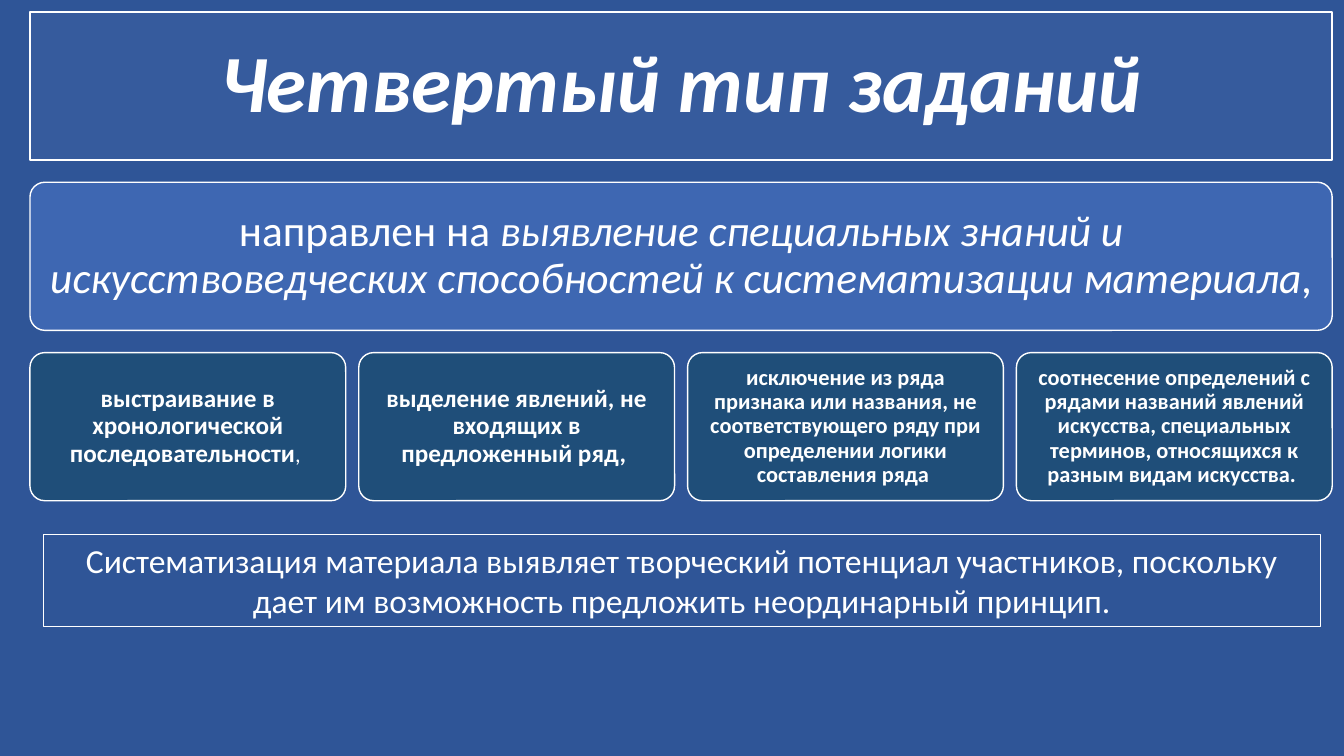
from dataclasses import dataclass

from lxml import etree
from pptx import Presentation
from pptx.dml.color import RGBColor
from pptx.enum.shapes import MSO_SHAPE
from pptx.enum.text import MSO_ANCHOR, MSO_AUTO_SIZE, PP_ALIGN
from pptx.oxml import parse_xml
from pptx.util import Pt

COLORS = {
    "background": "2F5597",
    "heading": "365B9D",
    "purpose": "3E67B2",
    "task": "1F4E79",
    "white": "FFFFFF",
}
FONT = "Calibri"
CORNER = 0.1
DRAWING = "http://schemas.openxmlformats.org/drawingml/2006/main"

HEADING = "Четвертый тип заданий"
PURPOSE = [
    ("направлен на ", {}),
    ("выявление специальных знаний и искусствоведческих способностей "
     "к систематизации материала", {"italic": True}),
    (", ", {}),
]
TASKS = [
    (18, [("выстраивание в хронологической последовательности", {}),
          (", ", {"bold": False, "size": Pt(16)})]),
    (18, [("выделение явлений, не входящих в предложенный ряд, ", {})]),
    (16, [("исключение из ряда признака или названия, не соответствующего "
           "ряду при определении логики составления ряда ", {})]),
    (16, [("соотнесение определений с рядами названий явлений искусства, "
           "специальных терминов, относящихся к разным видам искусства. ", {})]),
]
CONCLUSION = (
    "Систематизация материала выявляет творческий потенциал участников, "
    "поскольку дает им возможность предложить неординарный принцип."
)


@dataclass
class Box:
    left: float
    top: float
    width: float
    height: float

    def lengths(self):
        return [Pt(value) for value in (self.left, self.top, self.width, self.height)]


def color(name):
    return RGBColor.from_string(COLORS[name])


def write_text(shape, spans, size, inset, bold=False, italic=False, spacing=0.9):
    frame = shape.text_frame
    frame.word_wrap = True
    frame.auto_size = MSO_AUTO_SIZE.NONE
    frame.vertical_anchor = MSO_ANCHOR.MIDDLE
    frame.margin_left = frame.margin_right = Pt(inset)
    frame.margin_top = frame.margin_bottom = Pt(inset)
    para = frame.paragraphs[0]
    para.alignment = PP_ALIGN.CENTER
    para.line_spacing = spacing
    para.font.name = FONT
    para.font.size = Pt(size)
    para.font.bold = bold
    para.font.italic = italic
    para.font.color.rgb = color("white")
    for text, changes in spans:
        span = para.add_run()
        span.text = text
        for attribute, value in changes.items():
            setattr(span.font, attribute, value)


def style_card(shape, fill):
    shape.fill.solid()
    shape.fill.fore_color.rgb = color(fill)
    shape.line.color.rgb = color("white")
    shape.line.width = Pt(1)


def add_card(page, box, fill):
    card = page.shapes.add_shape(MSO_SHAPE.ROUNDED_RECTANGLE, *box.lengths())
    card.adjustments[0] = CORNER
    card.shadow.inherit = False
    style_card(card, fill)
    return card


def place_heading(page, box):
    title = page.shapes.title
    title.left, title.top, title.width, title.height = box.lengths()
    outline = parse_xml(
        f'<a:prstGeom xmlns:a="{DRAWING}" prst="roundRect"><a:avLst>'
        f'<a:gd name="adj" fmla="val {round(CORNER * 100000)}"/>'
        "</a:avLst></a:prstGeom>"
    )
    transform = title.element.spPr.find(etree.QName(DRAWING, "xfrm").text)
    transform.addnext(outline)
    style_card(title, "heading")
    write_text(title, [(HEADING, {})], 58, 17.3, bold=True, italic=True)


def place_purpose(page, box):
    write_text(add_card(page, box, "purpose"), PURPOSE, 31, 9.3)


def place_tasks(page, box, gap):
    width = (box.width - gap * (len(TASKS) - 1)) / len(TASKS)
    for index, (size, spans) in enumerate(TASKS):
        left = box.left + index * (width + gap)
        card = add_card(page, Box(left, box.top, width, box.height), "task")
        write_text(card, spans, size, 5, bold=True)


def place_conclusion(page, box):
    frame = page.shapes.add_shape(MSO_SHAPE.RECTANGLE, *box.lengths())
    frame.shadow.inherit = False
    frame.fill.background()
    frame.line.color.rgb = color("white")
    frame.line.width = Pt(0.75)
    write_text(frame, [(CONCLUSION, {})], 24, 5, spacing=1)


def build_page(deck):
    page = deck.slides.add_slide(deck.slide_layouts[5])
    page.background.fill.solid()
    page.background.fill.fore_color.rgb = color("background")
    rows = [Box(21.4, 8.5 + index * 121.7, 930.2, 105.8) for index in range(3)]
    place_heading(page, rows[0])
    place_purpose(page, rows[1])
    place_tasks(page, rows[2], 9.3)
    place_conclusion(page, Box(31, 381.6, 912, 65.8))


def main():
    deck = Presentation()
    deck.slide_width = Pt(960)
    deck.slide_height = Pt(540)
    build_page(deck)
    deck.save("out.pptx")


if __name__ == "__main__":
    main()
